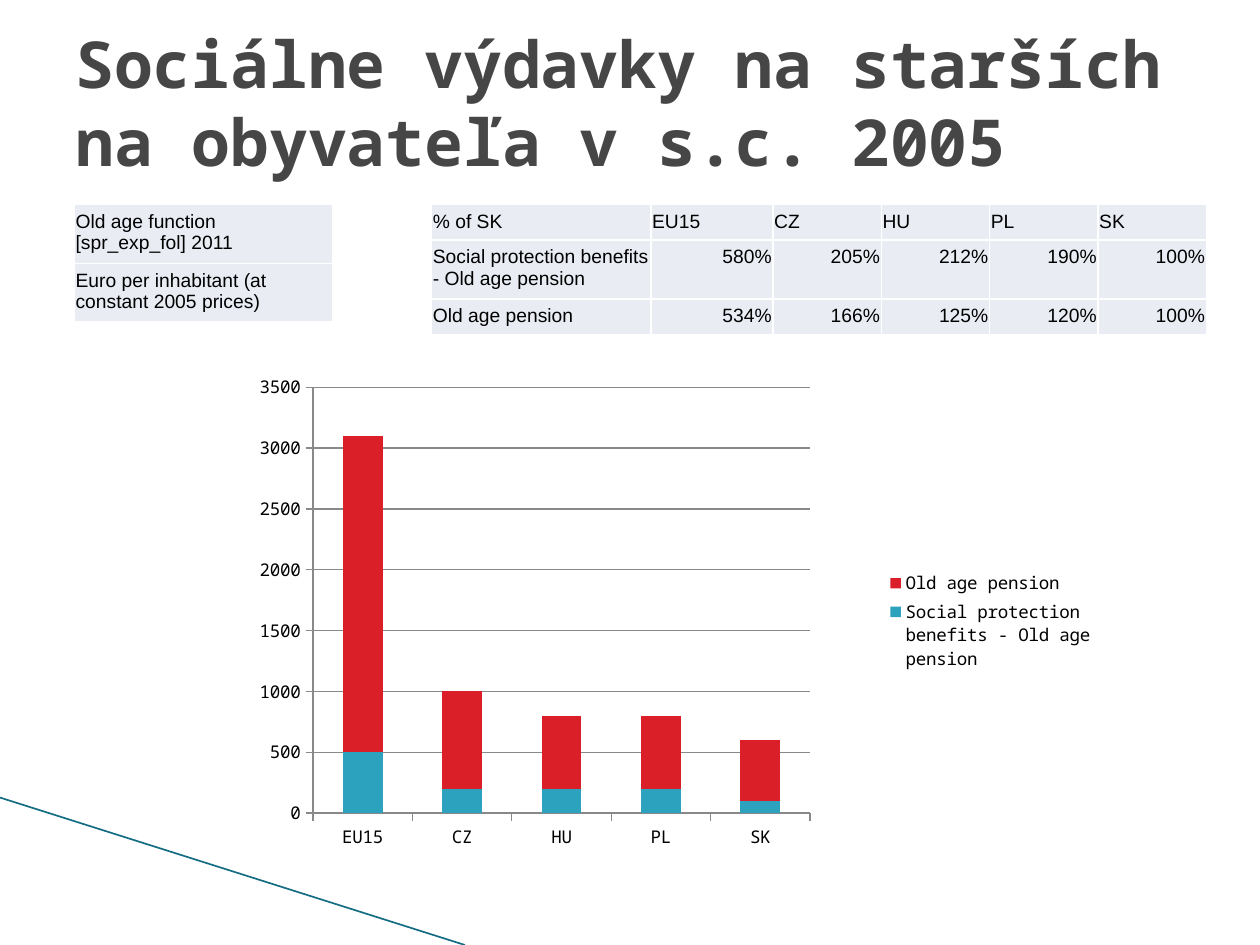
from dataclasses import dataclass
from typing import Any

from lxml.etree import SubElement
from pptx import Presentation
from pptx.chart.data import CategoryChartData
from pptx.dml.color import RGBColor
from pptx.enum.chart import XL_CHART_TYPE, XL_LEGEND_POSITION, XL_TICK_MARK
from pptx.enum.shapes import MSO_CONNECTOR
from pptx.enum.text import MSO_ANCHOR, PP_ALIGN
from pptx.oxml import parse_xml
from pptx.oxml.ns import nsdecls, qn
from pptx.util import Inches, Pt

INK = RGBColor(0x46, 0x46, 0x46)
BLACK = RGBColor(0, 0, 0)
CELL = RGBColor(0xE9, 0xEC, 0xF3)
AXIS = RGBColor(0x89, 0x89, 0x89)
BLUE = RGBColor(0x2D, 0xA2, 0xBF)
RED = RGBColor(0xDA, 0x1F, 0x28)
TEAL = RGBColor(0x15, 0x6D, 0x83)

MONO = "Noto Sans Mono"
TITLE_FONT = {"name": MONO, "size": Pt(37), "bold": True}
CELL_FONT = {"name": "Arial", "size": Pt(11)}
CHART_FONT = {"name": MONO, "size": Pt(10)}
INSETS = {
    "margin_left": Inches(0.01),
    "margin_right": Inches(0.01),
    "margin_top": Inches(0.05),
    "margin_bottom": Inches(0.05),
}
COLS, ROWS = 100, 75
CHART_BOX = (19.3, 29.6, 68.5, 39.4)
PLOT_BOX = (1.3, 0.2, 43.7, 37.6)
TABLE_TOP = 16.23
REGIONS = ["EU15", "CZ", "HU", "PL", "SK"]
BENEFITS = "Social protection benefits - Old age pension"
PENSION = "Old age pension"


@dataclass
class Grid:
    width: int
    height: int

    def x(self, cols: float) -> int:
        return round(self.width * cols / COLS)

    def y(self, rows: float) -> int:
        return round(self.height * rows / ROWS)

    def box(self, x: float, y: float, w: float, h: float) -> tuple[int, int, int, int]:
        return self.x(x), self.y(y), self.x(w), self.y(h)


@dataclass
class TableBlock:
    left: float
    widths: list[float]
    heights: list[float]
    cells: list[list[str]]


@dataclass
class Series:
    name: str
    values: list[int]
    color: RGBColor


TABLES = [
    TableBlock(34.25, [17.4, 9.7] + [8.6] * 4, [2.7, 4.4, 2.7], [
        ["% of SK", *REGIONS],
        [BENEFITS, "580%", "205%", "212%", "190%", "100%"],
        [PENSION, "534%", "166%", "125%", "120%", "100%"],
    ]),
    TableBlock(5.9, [20.5], [4.4, 4.4], [
        ["Old age function [spr_exp_fol] 2011"],
        ["Euro per inhabitant (at constant 2005 prices)"],
    ]),
]
SERIES = [
    Series(BENEFITS, [500, 200, 200, 200, 100], BLUE),
    Series(PENSION, [2600, 800, 600, 600, 500], RED),
]


def apply(target: Any, values: dict[str, Any]) -> None:
    for name, value in values.items():
        setattr(target, name, value)


def style_font(font: Any, values: dict[str, Any], color: RGBColor) -> None:
    apply(font, values)
    font.color.rgb = color


def style_line(line: Any, color: RGBColor, width: float) -> None:
    line.color.rgb = color
    line.width = Pt(width)


def add_corner_line(s: Any, grid: Grid) -> None:
    line = s.shapes.add_connector(
        MSO_CONNECTOR.STRAIGHT, 0, grid.y(63.3), grid.x(36.9), grid.y(ROWS))
    style_line(line.line, TEAL, 0.96)
    SubElement(line._element.spPr, qn("a:effectLst"))


def add_title(s: Any, grid: Grid) -> None:
    tf = s.shapes.add_textbox(*grid.box(5, 3, 90, 10.1)).text_frame
    apply(tf, {"word_wrap": True, "vertical_anchor": MSO_ANCHOR.MIDDLE})
    p = tf.paragraphs[0]
    p.text = "Sociálne výdavky na starších\vna obyvateľa v s.c. 2005"
    for r in p.runs:
        style_font(r.font, TITLE_FONT, INK)


def add_borders(cell: Any) -> None:
    tc_pr = cell._tc.get_or_add_tcPr()
    for i, side in enumerate(("lnL", "lnR", "lnT", "lnB")):
        tc_pr.insert(i, parse_xml(
            f'<a:{side} {nsdecls("a")} w="{Pt(0.96)}"><a:solidFill>'
            f'<a:srgbClr val="FFFFFF"/></a:solidFill></a:{side}>'))


def add_table(s: Any, grid: Grid, block: TableBlock) -> None:
    frame = s.shapes.add_table(
        len(block.heights), len(block.widths),
        *grid.box(block.left, TABLE_TOP, sum(block.widths), sum(block.heights)))
    table = frame.table
    apply(table, {"first_row": False, "horz_banding": False})
    for column, width in zip(table.columns, block.widths):
        column.width = grid.x(width)
    for row, height, texts in zip(table.rows, block.heights, block.cells):
        row.height = grid.y(height)
        for cell, text in zip(row.cells, texts):
            apply(cell, INSETS)
            cell.fill.solid()
            cell.fill.fore_color.rgb = CELL
            add_borders(cell)
            p = cell.text_frame.paragraphs[0]
            r = p.add_run()
            r.text = text
            style_font(r.font, CELL_FONT, BLACK)
            if text.endswith("%"):
                p.alignment = PP_ALIGN.RIGHT


def set_plot_area(chart: Any) -> None:
    area = chart._chartSpace.chart.plotArea
    for old in area.findall(qn("c:layout")):
        area.remove(old)
    x, y, w, h = PLOT_BOX
    _, _, cols, rows = CHART_BOX
    shares = zip("xywh", (x / cols, y / rows, w / cols, h / rows))
    sizes = "".join(f'<c:{k} val="{v}"/>' for k, v in shares)
    area.insert(0, parse_xml(
        f'<c:layout {nsdecls("c")}><c:manualLayout><c:layoutTarget val="outer"/>'
        f'<c:xMode val="edge"/><c:yMode val="edge"/>{sizes}'
        '</c:manualLayout></c:layout>'))


def add_chart(s: Any, grid: Grid) -> None:
    data = CategoryChartData()
    data.categories = REGIONS
    for item in SERIES:
        data.add_series(item.name, item.values)
    chart = s.shapes.add_chart(
        XL_CHART_TYPE.COLUMN_STACKED, *grid.box(*CHART_BOX), data).chart
    style_font(chart.font, CHART_FONT, BLACK)
    apply(chart, {"has_title": False, "has_legend": True})
    apply(chart.legend, {"position": XL_LEGEND_POSITION.RIGHT, "include_in_layout": False})
    style_font(chart.legend.font, CHART_FONT, BLACK)
    plot = chart.plots[0]
    apply(plot, {"gap_width": 150, "overlap": 100, "vary_by_categories": False})
    for series, item in zip(plot.series, SERIES):
        series.format.fill.solid()
        series.format.fill.fore_color.rgb = item.color
    for axis in (chart.category_axis, chart.value_axis):
        axis.major_tick_mark = XL_TICK_MARK.OUTSIDE
        style_font(axis.tick_labels.font, CHART_FONT, BLACK)
        style_line(axis.format.line, AXIS, 0.75)
    apply(chart.value_axis, {"minimum_scale": 0, "maximum_scale": 3500, "major_unit": 500})
    style_line(chart.value_axis.major_gridlines.format.line, AXIS, 0.75)
    set_plot_area(chart)


def main() -> None:
    prs = Presentation()
    apply(prs, {"slide_width": Inches(10), "slide_height": Inches(7.5)})
    grid = Grid(prs.slide_width, prs.slide_height)
    s = prs.slides.add_slide(prs.slide_layouts[6])
    add_corner_line(s, grid)
    add_title(s, grid)
    add_chart(s, grid)
    for block in TABLES:
        add_table(s, grid, block)
    prs.save("out.pptx")


if __name__ == "__main__":
    main()
